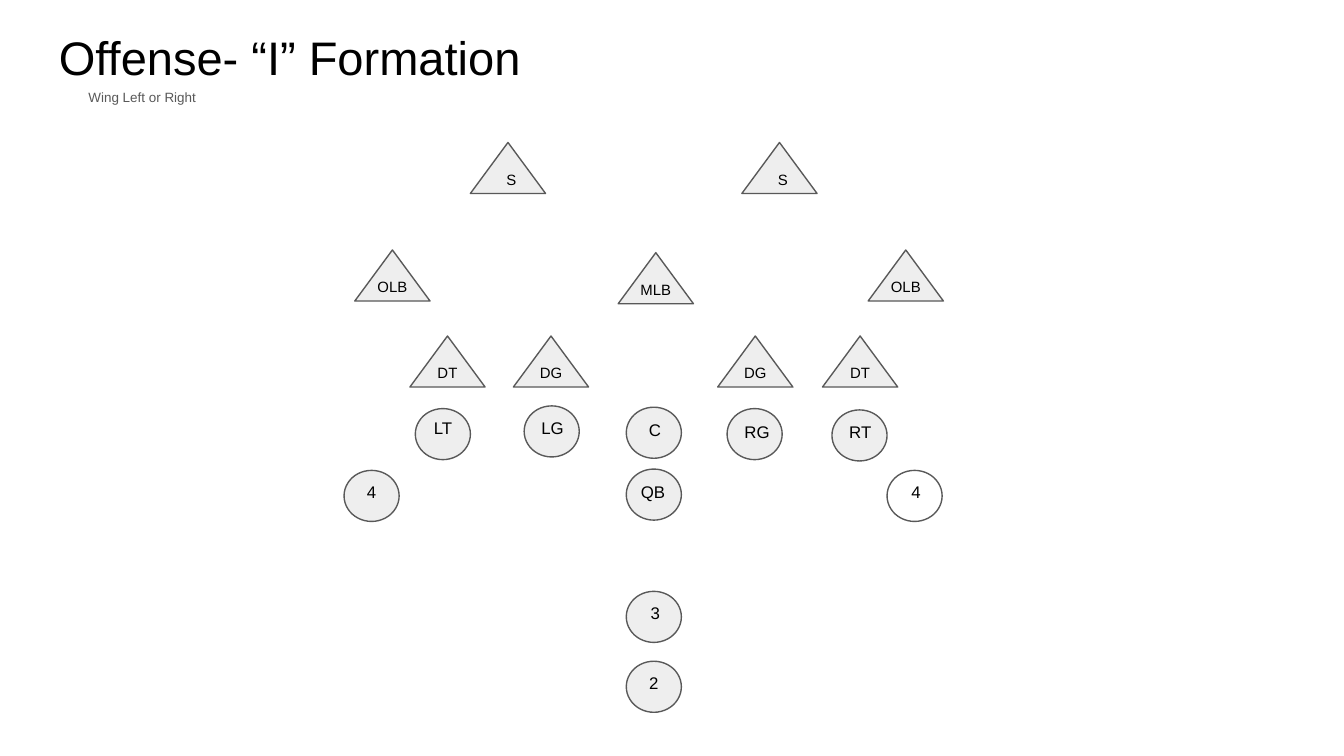
import pptx
import pptx.util
import pptx.dml.color
import pptx.enum.shapes
import pptx.enum.text

Inches = pptx.util.Inches
Pt = pptx.util.Pt
RGBColor = pptx.dml.color.RGBColor
MSO_SHAPE = pptx.enum.shapes.MSO_SHAPE
PP_ALIGN = pptx.enum.text.PP_ALIGN
MSO_ANCHOR = pptx.enum.text.MSO_ANCHOR

BLACK = RGBColor(0x00, 0x00, 0x00)
GRAY = RGBColor(0x59, 0x59, 0x59)
LIGHT = RGBColor(0xEE, 0xEE, 0xEE)

LEFT, CENTER = PP_ALIGN.LEFT, PP_ALIGN.CENTER

prs = pptx.Presentation()
prs.slide_width = Inches(10)
prs.slide_height = Inches(10 * 9 / 16)
s = prs.slides.add_slide(prs.slide_layouts[6])


def add_text(text, x, y, w, h, size, color=BLACK, align=LEFT):
    tb = s.shapes.add_textbox(Inches(x), Inches(y), Inches(w), Inches(h))
    tf = tb.text_frame
    tf.word_wrap = True
    tf.margin_left = tf.margin_right = Inches(0.1)
    tf.margin_top = tf.margin_bottom = Inches(0.1)
    p = tf.paragraphs[0]
    p.text = text
    p.alignment = align
    p.font.name = "Arial"
    p.font.size = Pt(size)
    p.font.color.rgb = color
    return tf


def add_marker(kind, x, y, w, h, fill=LIGHT):
    """Draw one player's outline; a fill of None leaves it hollow."""
    sp = s.shapes.add_shape(kind, Inches(x), Inches(y), Inches(w), Inches(h))
    sp.shadow.inherit = False
    if fill is None:
        sp.fill.background()
    else:
        sp.fill.solid()
        sp.fill.fore_color.rgb = fill
    sp.line.color.rgb = GRAY
    sp.line.width = Pt(0.75)


title = add_text("Offense- “I” Formation", 0.34, 0.11, 9.32, 0.63, 25.2)
title.vertical_anchor = MSO_ANCHOR.BOTTOM
title.margin_bottom = Inches(0.11)
subtitle = add_text("Wing Left or Right", 0.56, 0.59, 2.13, 0.48, 7.2, GRAY)
subtitle.margin_top = Inches(0.14)
subtitle.paragraphs[0].line_spacing = 0.95
subtitle.paragraphs[0].space_after = Pt(12)

# Defense: label, marker left, marker top
defense = [
    ("S", 3.5, 1.06), ("S", 5.52, 1.06),
    ("OLB", 2.64, 1.86), ("MLB", 4.6, 1.88), ("OLB", 6.46, 1.86),
    ("DT", 3.05, 2.5), ("DG", 3.82, 2.5), ("DG", 5.34, 2.5), ("DT", 6.12, 2.5),
]
for label, x, y in defense:
    add_marker(MSO_SHAPE.FLOWCHART_EXTRACT, x, y, 0.56, 0.38)
    if label == "S":
        add_text(label, x + 0.17, y + 0.14, 0.21, 0.34, 8)
    else:
        add_text(label, x + 0.045, y + 0.14, 0.47, 0.34, 8, align=CENTER)

# Offense: label, marker left and top, label left, top and width, alignment, fill
offense = [
    ("LT", 3.09, 3.04, 3.13, 3.03, 0.37, LEFT, LIGHT),
    ("LG", 3.9, 3.02, 3.93, 3.03, 0.41, LEFT, LIGHT),
    ("C", 4.66, 3.03, 4.73, 3.05, 0.29, LEFT, LIGHT),
    ("RG", 5.41, 3.04, 5.44, 3.06, 0.41, LEFT, LIGHT),
    ("RT", 6.19, 3.05, 6.22, 3.06, 0.41, LEFT, LIGHT),
    ("QB", 4.66, 3.49, 4.67, 3.51, 0.41, LEFT, LIGHT),
    ("3", 4.66, 4.4, 4.73, 4.41, 0.29, CENTER, LIGHT),
    ("2", 4.66, 4.92, 4.72, 4.93, 0.29, CENTER, LIGHT),
    ("4", 2.56, 3.5, 2.62, 3.51, 0.29, CENTER, LIGHT),
    ("4", 6.6, 3.5, 6.67, 3.51, 0.29, CENTER, None),
]
for label, x, y, label_x, label_y, label_w, align, fill in offense:
    add_marker(MSO_SHAPE.OVAL, x, y, 0.41, 0.38, fill)
    add_text(label, label_x, label_y, label_w, 0.35, 9, align=align)

prs.save("out.pptx")
